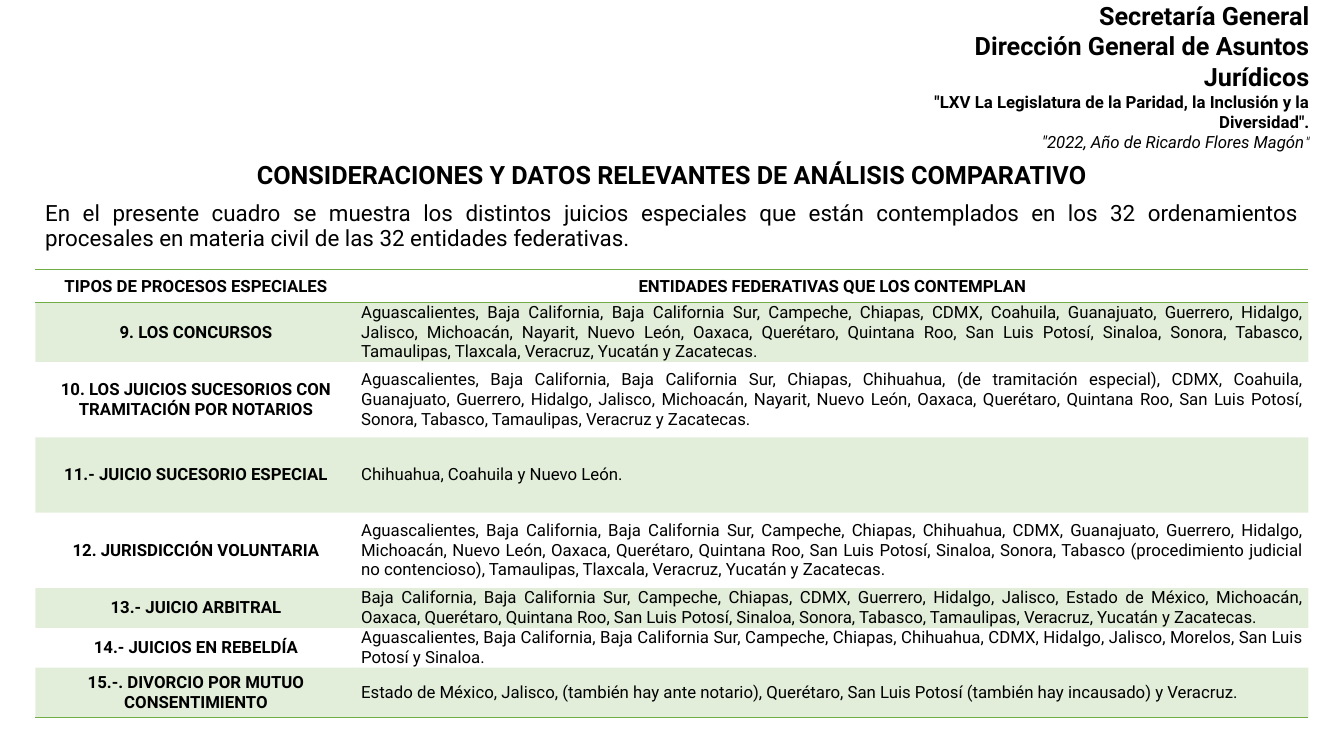
from lxml import etree
from pptx import Presentation
from pptx.dml.color import RGBColor
from pptx.enum.text import MSO_ANCHOR, MSO_AUTO_SIZE, PP_ALIGN
from pptx.oxml.ns import qn
from pptx.util import Cm, Pt

TOP, MIDDLE = MSO_ANCHOR.TOP, MSO_ANCHOR.MIDDLE
CENTER, RIGHT, JUSTIFY = PP_ALIGN.CENTER, PP_ALIGN.RIGHT, PP_ALIGN.JUSTIFY
NO_AUTOFIT = MSO_AUTO_SIZE.NONE
TITLE_ONLY = 5
COLORS = {"text": "000000", "green": "70AD47"}
FONT = "Roboto"
QUOTE_FONT = "TeX Gyre Adventor"
NO_STYLE_ID = "{2D5ABB26-0587-4C30-8999-92F81FD0307C}"
LEFT, WIDTH = Cm(0.89), Cm(32.08)
COLUMN_WIDTHS = (8.1, 23.98)

HEADINGS = ("TIPOS DE PROCESOS ESPECIALES", "ENTIDADES FEDERATIVAS QUE LOS CONTEMPLAN")
HEADING_HEIGHT = 0.83
# Row height in cm, type of process, states
PROCESSES = [
    (1.49, "9. LOS CONCURSOS",
     "Aguascalientes, Baja California, Baja California Sur, Campeche, Chiapas, CDMX, Coahuila, "
     "Guanajuato, Guerrero, Hidalgo, Jalisco, Michoacán, Nayarit, Nuevo León, Oaxaca, Querétaro, "
     "Quintana Roo, San Luis Potosí, Sinaloa, Sonora, Tabasco, Tamaulipas, Tlaxcala, Veracruz, "
     "Yucatán y Zacatecas."),
    (1.9, "10. LOS JUICIOS SUCESORIOS CON TRAMITACIÓN POR NOTARIOS",
     "Aguascalientes, Baja California, Baja California Sur, Chiapas, Chihuahua, (de tramitación "
     "especial), CDMX, Coahuila, Guanajuato, Guerrero, Hidalgo, Jalisco, Michoacán, Nayarit, "
     "Nuevo León, Oaxaca, Querétaro, Quintana Roo, San Luis Potosí, Sonora, Tabasco, Tamaulipas, "
     "Veracruz y Zacatecas."),
    (1.9, "11.- JUICIO SUCESORIO ESPECIAL", "Chihuahua, Coahuila y Nuevo León."),
    (1.9, "12. JURISDICCIÓN VOLUNTARIA",
     "Aguascalientes, Baja California, Baja California Sur, Campeche, Chiapas, Chihuahua, CDMX, "
     "Guanajuato, Guerrero, Hidalgo, Michoacán, Nuevo León, Oaxaca, Querétaro, Quintana Roo, "
     "San Luis Potosí, Sinaloa, Sonora, Tabasco (procedimiento judicial no contencioso), "
     "Tamaulipas, Tlaxcala, Veracruz, Yucatán y Zacatecas."),
    (1.0, "13.- JUICIO ARBITRAL",
     "Baja California, Baja California Sur, Campeche, Chiapas, CDMX, Guerrero, Hidalgo, Jalisco, "
     "Estado de México, Michoacán, Oaxaca, Querétaro, Quintana Roo, San Luis Potosí, Sinaloa, "
     "Sonora, Tabasco, Tamaulipas, Veracruz, Yucatán y Zacatecas."),
    (1.0, "14.- JUICIOS EN REBELDÍA",
     "Aguascalientes, Baja California, Baja California Sur, Campeche, Chiapas, Chihuahua, CDMX, "
     "Hidalgo, Jalisco, Morelos, San Luis Potosí y Sinaloa."),
    (1.27, "15.-. DIVORCIO POR MUTUO CONSENTIMIENTO",
     "Estado de México, Jalisco, (también hay ante notario), Querétaro, San Luis Potosí "
     "(también hay incausado) y Veracruz."),
]


def add_run(p, text, size=12, bold=False, italic=False, font=FONT):
    r = p.add_run()
    r.text = text
    r.font.name = font
    r.font.size = Pt(size)
    r.font.bold = bold
    r.font.italic = italic
    r.font.color.rgb = RGBColor.from_string(COLORS["text"])


def write(p, text, align=CENTER, spacing=None, **style):
    p.alignment = align
    if spacing:
        p.line_spacing = spacing
    add_run(p, text, **style)


def set_frame(tf, anchor=TOP):
    tf.word_wrap = True
    tf.auto_size = NO_AUTOFIT
    tf.vertical_anchor = anchor
    return tf


def add_text_box(s, left, top, width, height, anchor=TOP):
    return set_frame(s.shapes.add_textbox(left, top, width, height).text_frame, anchor)


def add_letterhead(s):
    tf = add_text_box(s, Cm(21.74), Cm(0.51), Cm(11.51), Cm(2.82), MIDDLE)
    p = tf.paragraphs[0]
    write(p, "Secretaría General", RIGHT, size=18, bold=True)
    write(tf.add_paragraph(), "Dirección General de Asuntos Jurídicos", RIGHT, size=18, bold=True)
    write(tf.add_paragraph(), '"LXV La Legislatura de la Paridad, la Inclusión y la Diversidad".',
          RIGHT, bold=True)
    p = tf.add_paragraph()
    write(p, '"2022, Año de Ricardo Flores Magón', RIGHT, italic=True)
    add_run(p, '"', size=11, italic=True, font=QUOTE_FONT)


def add_title(s):
    sp = s.shapes.title
    sp.left, sp.top, sp.width, sp.height = LEFT, Cm(3.78), WIDTH, Cm(1.09)
    tf = set_frame(sp.text_frame)
    write(tf.paragraphs[0], "CONSIDERACIONES Y DATOS RELEVANTES DE ANÁLISIS COMPARATIVO",
          spacing=1.15, size=18, bold=True)


def add_intro(s):
    tf = add_text_box(s, LEFT, Cm(4.98), WIDTH, Cm(1.65))
    write(tf.paragraphs[0],
          "En el presente cuadro se muestra los distintos juicios especiales que están "
          "contemplados en los 32 ordenamientos procesales en materia civil de las 32 "
          "entidades federativas.", JUSTIFY, spacing=0.9, size=16)


def add_border(cell, side):
    """Draw a green 1 pt line on side "T" or "B"; call before filling the cell."""
    ln = etree.SubElement(cell._tc.get_or_add_tcPr(), qn(f"a:ln{side}"), w=str(Pt(1)))
    fill = etree.SubElement(ln, qn("a:solidFill"))
    etree.SubElement(fill, qn("a:srgbClr"), val=COLORS["green"])


def fill_cell(cell, banded):
    if not banded:
        cell.fill.background()
        return
    cell.fill.solid()
    cell.fill.fore_color.rgb = RGBColor.from_string(COLORS["green"])
    color = cell._tc.tcPr.find(f"{qn('a:solidFill')}/{qn('a:srgbClr')}")
    etree.SubElement(color, qn("a:alpha"), val="20000")


def format_cell(cell, text, align, bold, borders, banded):
    cell.margin_left = cell.margin_right = Cm(0.11)
    cell.margin_top = cell.margin_bottom = 0
    cell.vertical_anchor = MIDDLE
    write(cell.text_frame.paragraphs[0], text, align, bold=bold)
    for side in borders:
        add_border(cell, side)
    fill_cell(cell, banded)


def add_process_table(s):
    rows = [(HEADING_HEIGHT, *HEADINGS)] + PROCESSES
    height = Cm(sum(row[0] for row in rows))
    table = s.shapes.add_table(len(rows), 2, LEFT, Cm(6.8), WIDTH, height).table
    table.first_row = table.horz_banding = False
    table._tbl.tblPr.find(qn("a:tableStyleId")).text = NO_STYLE_ID
    for column, width in zip(table.columns, COLUMN_WIDTHS):
        column.width = Cm(width)
    for i, (row_height, *texts) in enumerate(rows):
        table.rows[i].height = Cm(row_height)
        borders = "TB" if i == 0 else "B" if i == len(rows) - 1 else ""
        for j, text in enumerate(texts):
            heading = i == 0 or j == 0
            format_cell(table.cell(i, j), text, CENTER if heading else JUSTIFY,
                        heading, borders, banded=i % 2 == 1)


def main():
    prs = Presentation()
    prs.slide_width, prs.slide_height = Cm(33.87), Cm(19.05)
    s = prs.slides.add_slide(prs.slide_layouts[TITLE_ONLY])
    add_letterhead(s)
    add_title(s)
    add_intro(s)
    add_process_table(s)
    prs.save("out.pptx")


if __name__ == "__main__":
    main()
